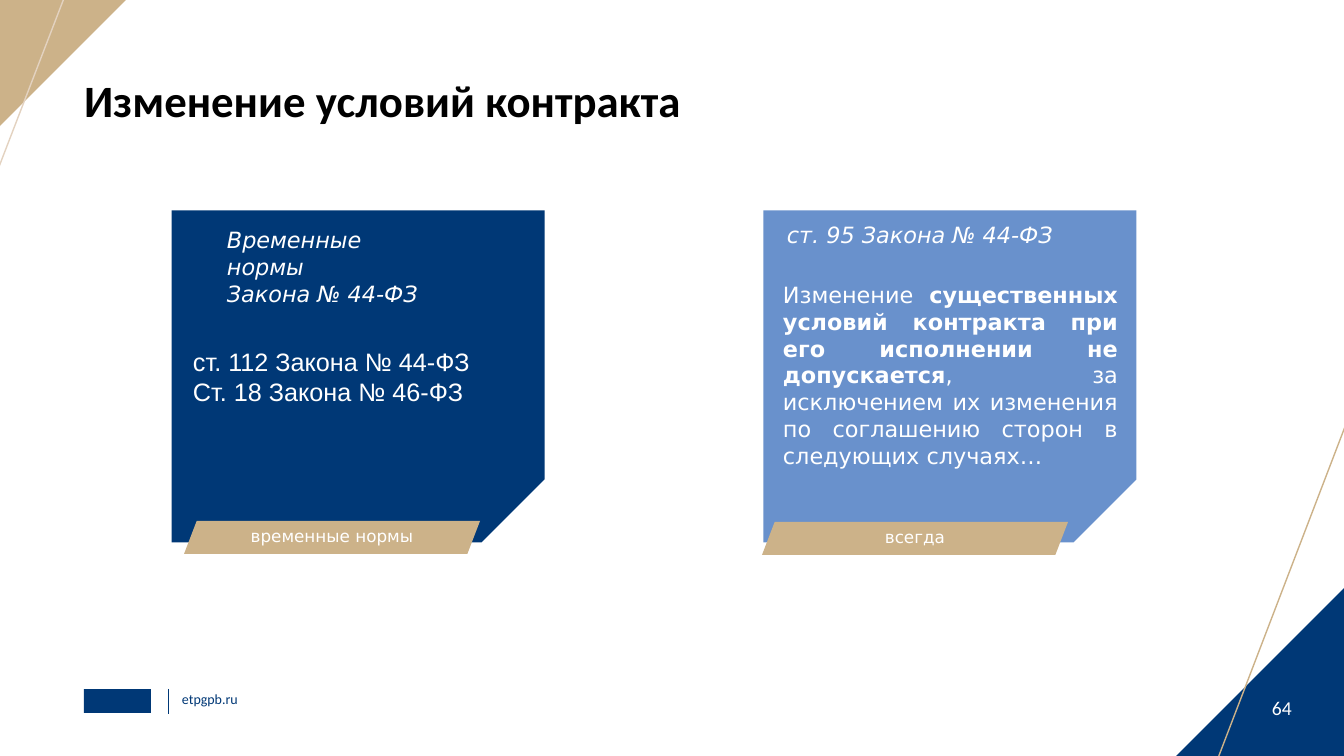
from lxml import etree
from pptx import Presentation, util as u
from pptx.dml.color import RGBColor
from pptx.enum import shapes, text
from pptx.oxml.ns import qn

PX = 914400 / 100.8  # one px in EMU
THEME = {
    "navy": "003876", "blue": "6991CC", "gold": "CCB289", "sand": "E3D2C0",
    "white": "FFFFFF", "black": "000000",
    "head": ("Calibri", 32), "page": ("Calibri", 14), "site": ("Calibri", 10),
    "note": ("DejaVu Sans", 16), "tag": ("DejaVu Sans", 12), "law": ("Arial", 18),
}
KIND = shapes.MSO_SHAPE
ALIGN = text.PP_ALIGN
ANCHOR = text.MSO_ANCHOR


def shape(kind, box, fill, turn=0, adj=None):
    item = slide.shapes.add_shape(kind, *[round(n * PX) for n in box])
    item.shadow.inherit = False
    item.fill.solid()
    item.fill.fore_color.rgb = RGBColor.from_string(THEME[fill])
    item.line.fill.background()
    item.rotation = turn
    if adj is not None:
        item.adjustments[0] = adj
    return item


def write(item, words, style, color, align=ALIGN.LEFT, inset=(10, 5),
          anchor=ANCHOR.TOP, space=1.0, italic=False, bold=False):
    frame = item.text_frame
    frame.text = words
    frame.word_wrap = True
    frame.vertical_anchor = anchor
    frame.margin_left = frame.margin_right = round(inset[0] * PX)
    frame.margin_top = frame.margin_bottom = round(inset[1] * PX)
    name, size = THEME[style]
    for para in frame.paragraphs:
        para.alignment = align
        para.line_spacing = space
        for run in para.runs:
            font = run.font
            font.name, font.size = name, u.Pt(size)
            font.italic, font.bold = italic, bold
            font.color.rgb = RGBColor.from_string(THEME[color])


deck = Presentation()
deck.slide_width, deck.slide_height = round(1344 * PX), round(756 * PX)
slide = deck.slides.add_slide(deck.slide_layouts[5])

# Corner triangles and logo block
shape(KIND.ISOSCELES_TRIANGLE, (1175, 588, 169, 169), "navy", adj=1)
shape(KIND.ISOSCELES_TRIANGLE, (0, 0, 126, 126), "gold", turn=180, adj=1)
shape(KIND.RECTANGLE, (84, 689, 67, 24), "navy")

# Slanted lines and footer divider
for ends, color, width in [
    ((1348, 419, 1215, 766), "gold", 1),
    ((66, -7, -5, 177), "sand", 1),
    ((168, 689, 168, 714), "navy", 0.5),
]:
    line = slide.shapes.add_connector(
        shapes.MSO_CONNECTOR.STRAIGHT, *[round(n * PX) for n in ends])
    line.line.color.rgb = RGBColor.from_string(THEME[color])
    line.line.width = u.Pt(width)
    etree.SubElement(line._element.spPr, qn("a:effectLst"))

# Title
title = slide.shapes.title
title.left, title.top, title.width, title.height = [
    round(n * PX) for n in (84, 79, 1175, 48)]
write(title, "Изменение условий контракта", "head", "black",
      inset=(0, 0), space=0.9, bold=True)

# Cards with a cut corner
for left, fill in [(192, "navy"), (784, "blue")]:
    shape(KIND.SNIP_1_RECTANGLE, (left, 190, 332, 373), fill, turn=90, adj=0.19)

# Gold tags
for box, words in [
    ((762, 522, 306, 33), "всегда"),
    ((184, 521, 296, 33), "временные нормы"),
]:
    tag = shape(KIND.PARALLELOGRAM, box, "gold", adj=0.384)
    write(tag, words, "tag", "white", ALIGN.CENTER, (8, 4), ANCHOR.MIDDLE, 0.9)

# Card texts, page number and site
rule = ("Изменение ",
        "существенных условий контракта при его исполнении не допускается",
        ", за исключением их изменения по соглашению сторон в следующих случаях…")
flat = {"inset": (0, 0)}
just = {"align": ALIGN.JUSTIFY}
boxes = []
for box, words, style, color, extra in [
    ((777, 216, 300, 37), "ст. 95 Закона № 44-ФЗ", "note", "white", {"italic": True}),
    ((217, 221, 237, 65), "Временные нормы\nЗакона № 44-ФЗ", "note", "white",
     {"italic": True, **just}),
    ((183, 341, 672, 72), "ст. 112 Закона № 44-ФЗ\nСт. 18 Закона № 46-ФЗ",
     "law", "white", just),
    ((1241, 683, 82, 36), "64", "page", "white",
     {"align": ALIGN.CENTER, "anchor": ANCHOR.BOTTOM, **flat}),
    ((182, 691, 111, 17), "etpgpb.ru", "site", "navy", flat),
    ((773, 276, 355, 201), rule[0], "note", "white", just),
]:
    item = slide.shapes.add_textbox(*[round(n * PX) for n in box])
    write(item, words, style, color, **extra)
    boxes.append(item)

# Bold middle part of the rule
para = boxes[-1].text_frame.paragraphs[0]
for part, bold in zip(rule[1:], (True, False)):
    run = para.add_run()
    run.text = part
    run.font.name, run.font.size = THEME["note"][0], u.Pt(THEME["note"][1])
    run.font.bold = bold
    run.font.color.rgb = RGBColor.from_string(THEME["white"])

deck.save("out.pptx")
